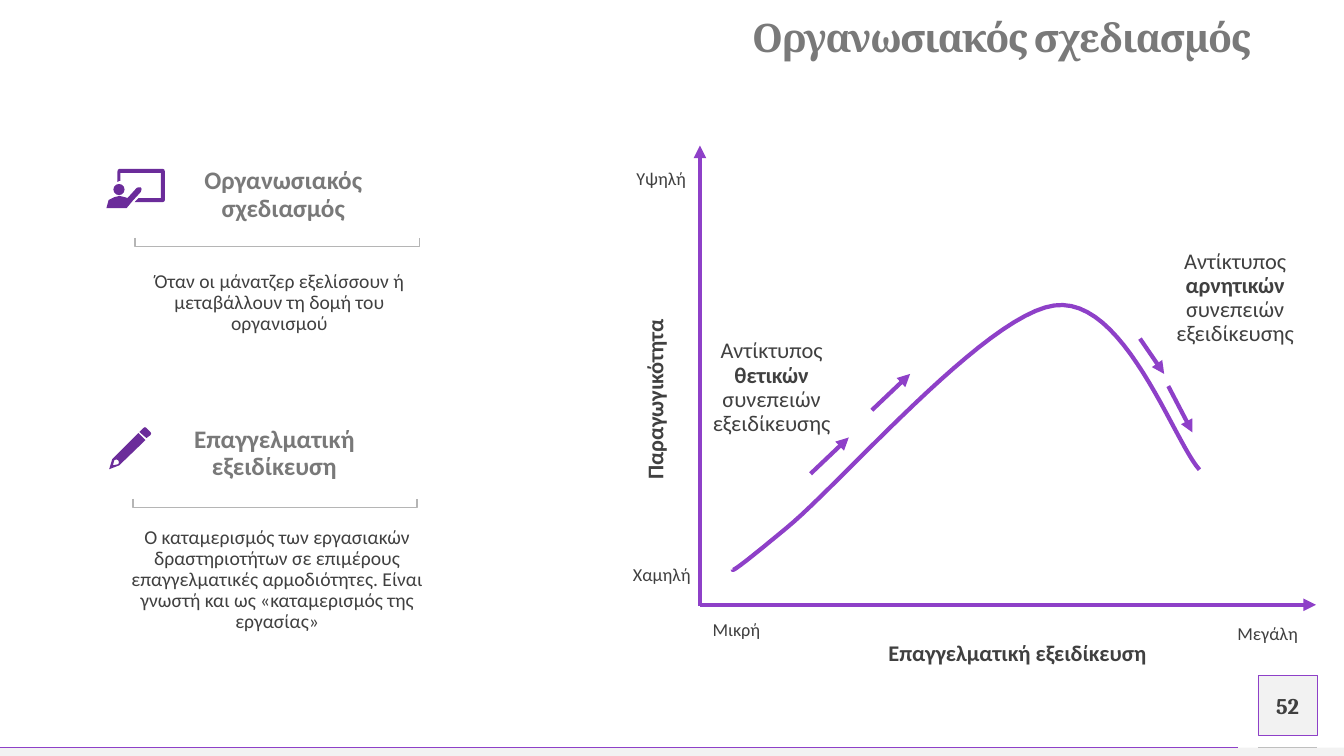
from pptx import Presentation
from pptx.dml.color import RGBColor
from pptx.enum.shapes import MSO_CONNECTOR, MSO_SHAPE
from pptx.enum.text import MSO_ANCHOR, MSO_AUTO_SIZE, PP_ALIGN
from pptx.oxml.ns import qn
from pptx.util import Pt
from lxml.etree import SubElement

VIOLET, PLUM, INK, GREY, PALE = "8E40C8", "6B2C9A", "404040", "797979", "F2F2F2"


def color(code):
    """Turn a hex string into a colour."""
    return RGBColor.from_string(code)


def write(frame, text, size, code=INK, bold=False, face="Calibri", space=0.9):
    """Fill a frame with one centred paragraph; stars toggle bold."""
    frame.word_wrap = True
    frame.auto_size = MSO_AUTO_SIZE.NONE
    para = frame.paragraphs[0]
    para.alignment = PP_ALIGN.CENTER
    para.line_spacing = space
    para.space_before = Pt(0)
    font = para.font
    font.size, font.name, font.bold = Pt(size), face, bold
    font.color.rgb = color(code)
    for spot, part in enumerate(text.split("*")):
        run = para.add_run()
        run.text = part
        if spot % 2:
            run.font.bold = True
    return para


def label(slide, left, top, width, height, text, size, **style):
    """Add a text box."""
    box = slide.shapes.add_textbox(Pt(left), Pt(top), Pt(width), Pt(height))
    write(box.text_frame, text, size, **style)
    return box


def line(slide, ends, code, width, head=False):
    """Draw a straight line, with an arrowhead if asked."""
    link = slide.shapes.add_connector(MSO_CONNECTOR.STRAIGHT, *map(Pt, ends))
    link.line.color.rgb = color(code)
    link.line.width = Pt(width)
    props = link._element.spPr
    if head:
        SubElement(props.find(qn("a:ln")), qn("a:tailEnd"), type="triangle")
    SubElement(props, qn("a:effectLst"))


def paint(shape, fill=None, edge=None, width=1):
    """Set the fill and line of a shape."""
    shape.shadow.inherit = False
    if fill:
        shape.fill.solid()
        shape.fill.fore_color.rgb = color(fill)
    else:
        shape.fill.background()
    if edge:
        shape.line.color.rgb = color(edge)
        shape.line.width = Pt(width)
    else:
        shape.line.fill.background()


def trace(slide, left, top, loops, close=True, **style):
    """Draw an outline from lists of points."""
    loops = [[(x * 100, y * 100) for x, y in loop] for loop in loops]
    pen = slide.shapes.build_freeform(*loops[0][0], scale=127.0)
    for spot, loop in enumerate(loops):
        if spot:
            pen.move_to(*loop[0])
        pen.add_line_segments(loop[1:], close=close)
    paint(pen.convert_to_shape(Pt(left), Pt(top)), **style)


def bend(start, curves, steps=24):
    """Sample a chain of cubic curves."""
    points = [start]
    for one, two, end in curves:
        for step in range(1, steps + 1):
            t = step / steps
            u = 1 - t
            points.append(tuple(
                u**3 * a + 3 * u * u * t * b + 3 * u * t * t * c + t**3 * d
                for a, b, c, d in zip(start, one, two, end)))
        start = end
    return points


def teacher(slide, left, top):
    """Draw the board and the speaker."""
    board = [(40.3, 0), (9.4, 0), (8.3, 0.6), (7.9, 2), (7.9, 9.4), (9.4, 8.6),
             (10.1, 8.6), (10.1, 2.9), (38.9, 2.9), (38.9, 20.9), (23, 20.9),
             (20.2, 23.8), (40.3, 23.8), (41.4, 23.3), (41.8, 22.3), (41.8, 2),
             (41.4, 0.6)]
    body = [(25.2, 14.4), (24.5, 13.3), (23, 13.2), (21.6, 13.7), (15.1, 20.9),
            (13, 20.2), (9.4, 19.4), (5.8, 20.2), (1.6, 22.3), (1.2, 23.8),
            (0, 28.1), (14.4, 28.1), (18.7, 23), (24.5, 16.6)]
    for part in (board, body):
        trace(slide, left, top, [part], fill=PLUM)
    head = slide.shapes.add_shape(
        MSO_SHAPE.OVAL, Pt(left + 5), Pt(top + 10.8), Pt(8), Pt(8))
    paint(head, PLUM)


def pencil(slide, left, top):
    """Draw the pencil."""
    stem = [(20.9, 4.3), (2.2, 23), (0, 30.2), (7.2, 27.4), (25.9, 9.4)]
    tip = [(6.5, 23.8), (7, 25.2), (6.5, 26.6), (2.9, 27.4), (2.9, 26.6),
           (3.6, 23.8), (5, 23.2)]
    cap = [(29.5, 3.6), (26.6, 0.7), (25.5, 0.1), (24.5, 0.7), (21.6, 3.6),
           (26.6, 7.9), (29.5, 5.8), (29.9, 4.6)]
    trace(slide, left, top, [stem, tip], fill=PLUM)
    trace(slide, left, top, [cap], fill=PLUM)


def card(slide, left, top, icon, name, text, head, rule, note):
    """Place an icon, a heading, a bracket and a note."""
    icon(slide, left, top + 4)
    label(slide, left + head, top, 178.6, 28, name, 18, code=GREY, bold=True)
    x, y = rule
    trace(slide, left + x, top + y, [[(0, 0), (0, 6), (203, 6), (203, 0)]],
          close=False, edge="B5B5B5")
    x, y, width = note
    frame = label(slide, left + x, top + y, width, 60, text, 14).text_frame
    frame.margin_left = frame.margin_right = 0
    frame.margin_top = frame.margin_bottom = 0


def graph(slide, left, top, width, height):
    """Draw the axes, the curve, its arrows and labels."""
    base = top + height
    line(slide, (left, base, left + width, base), VIOLET, 3, True)
    line(slide, (left, base + 1, left, top), VIOLET, 3, True)
    curve = bend((23.4, 302.8), [
        ((23.4, 303.5), (23.4, 305), (61.6, 273.3)),
        ((100.5, 241.6), (204.2, 120.6), (253.1, 114.2)),
        ((302.8, 107), (338.1, 210.6), (356.8, 231.5))])
    trace(slide, left, top, [curve], close=False, edge=VIOLET, width=3)
    for x, y, dx, dy in ((79, 234.4, 27.3, -25.9), (122.8, 189, 27.3, -25.9),
                         (334.5, 171.8, 17.3, 33.1), (314.3, 137.9, 17.3, 25.2)):
        x, y = left + x, top + y
        line(slide, (x, y, x + dx, y + dy), VIOLET, 3, True)
    for x, y, wide, text, size, bold in (
            (325.8, 71, 113, "Αντίκτυπος *αρνητικών* συνεπειών εξειδίκευσης", 16, False),
            (-2.5, 135, 107.3, "Αντίκτυπος *θετικών* συνεπειών εξειδίκευσης", 16, False),
            (122.8, 351, 208, "Επαγγελματική εξειδίκευση", 16, True),
            (351.8, 338.8, 107.3, "Μεγάλη", 13, False),
            (-27.7, 336, 107.3, "Μικρή", 13, False),
            (-61.5, 296.3, 68.4, "Χαμηλή", 13, False),
            (-66.6, 13.4, 77.8, "Υψηλή", 13, False)):
        label(slide, left + x, top + y, wide, 54.7, text, size, bold=bold)
    side = label(slide, left - 118.4, top + 166, 180.7, 31,
                 "Παραγωγικότητα", 16, bold=True)
    side.rotation = 270


def title(slide, left, top, width, height):
    """Set the title."""
    shape = slide.shapes.title
    shape.left, shape.top = Pt(left), Pt(top)
    shape.width, shape.height = Pt(width), Pt(height)
    frame = shape.text_frame
    frame.margin_left = frame.margin_right = 0
    frame.margin_top = frame.margin_bottom = 0
    frame.vertical_anchor = MSO_ANCHOR.TOP
    para = write(frame, "Οργανωσιακός σχεδιασμός", 28, GREY, True, "Cambria")
    para.runs[0]._r.get_or_add_rPr().set("spc", "-100")


def footer(slide, left, top, size):
    """Draw the bottom bar and the page number."""
    bar = slide.shapes.add_shape(MSO_SHAPE.RECTANGLE, 0, Pt(534), Pt(960), Pt(6))
    paint(bar, PALE)
    line(slide, (0, 534, 884, 534), VIOLET, 0.25)
    line(slide, (left, 533.5, left + size, 533.5), "BFBFBF", 0.5)
    box = slide.shapes.add_shape(
        MSO_SHAPE.RECTANGLE, Pt(left), Pt(top), Pt(size), Pt(size))
    paint(box, PALE, VIOLET, 0.25)
    box.text_frame.vertical_anchor = MSO_ANCHOR.MIDDLE
    write(box.text_frame, "52", 16, bold=True, face="Cambria", space=1.0)


def main():
    """Build and save the slide."""
    deck = Presentation()
    deck.slide_width, deck.slide_height = Pt(960), Pt(540)
    slide = deck.slides.add_slide(deck.slide_layouts[5])
    footer(slide, 898.5, 482.5, 42.5)
    title(slide, 525.6, 13.5, 379.4, 60)
    graph(slide, 500, 104, 440, 328)
    card(slide, 76, 116.6, teacher, "Οργανωσιακός σχεδιασμός",
         "Όταν οι μάνατζερ εξελίσσουν ή μεταβάλλουν τη δομή του οργανισμού",
         37, (20.5, 53.3), (12.6, 77.1, 222))
    card(slide, 78, 301, pencil, "Επαγγελματική εξειδίκευση",
         "Ο καταμερισμός των εργασιακών δραστηριοτήτων σε επιμέρους "
         "επαγγελματικές αρμοδιότητες. Είναι γνωστή και ως «καταμερισμός "
         "της εργασίας»", 28.6, (17, 55.4), (7.7, 75.6, 224.6))
    deck.save("out.pptx")


if __name__ == "__main__":
    main()
